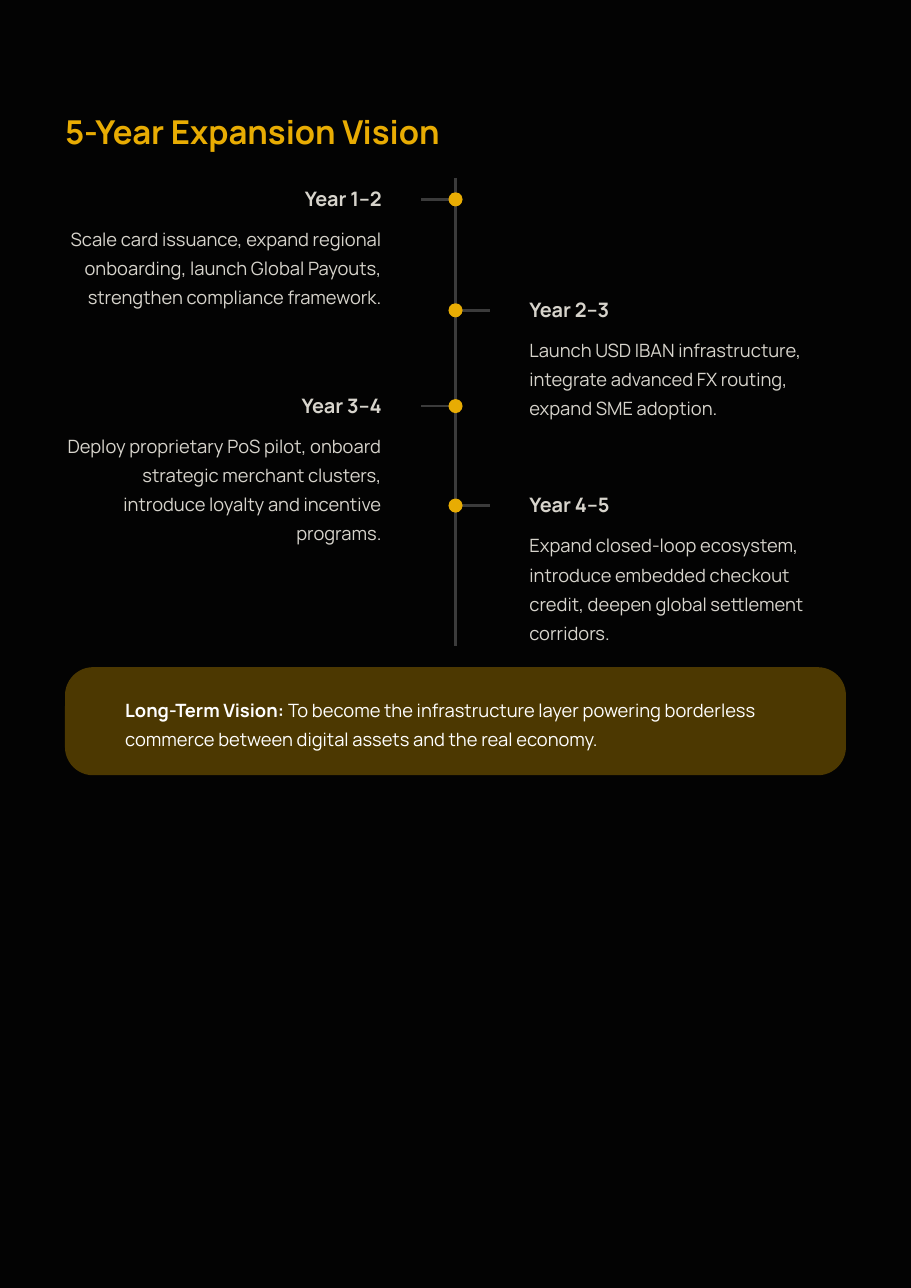
from lxml.etree import SubElement
from pptx import Presentation
from pptx.dml.color import RGBColor
from pptx.enum.shapes import MSO_CONNECTOR as Connector, MSO_SHAPE as Shape
from pptx.enum.text import MSO_ANCHOR as Anchor, MSO_AUTO_SIZE as AutoSize, PP_ALIGN as Align
from pptx.oxml.ns import qn
from pptx.util import Pt

FONT = "Manrope"
BACKGROUND, GOLD, GREY, CREAM, BROWN, WHITE = "030303", "E8AC03", "3B3B3B", "D7D4CC", "4C3801", "FFFFFF"
SLIDE_WIDTH, SLIDE_HEIGHT = 595.44, 841.68
MARGIN = 42.5
CONTENT_WIDTH = SLIDE_WIDTH - 2 * MARGIN
LINE_WIDTH, STUB_LENGTH, DOT_SIZE, TEXT_GAP, TEXT_WIDTH = 1.6, 22.5, 9.2, 48.3, 206.9

MILESTONES = [
    (13.7, "Year 1–2", "Scale card issuance, expand regional onboarding, launch Global Payouts, "
                       "strengthen compliance framework."),
    (86.2, "Year 2–3", "Launch USD IBAN infrastructure, integrate advanced FX routing, "
                       "expand SME adoption."),
    (148.8, "Year 3–4", "Deploy proprietary PoS pilot, onboard strategic merchant clusters, "
                        "introduce loyalty and incentive programs."),
    (213.8, "Year 4–5", "Expand closed-loop ecosystem, introduce embedded checkout credit, "
                        "deepen global settlement corridors."),
]


def color(hex_value):
    """Turn a hex string into a colour."""
    return RGBColor.from_string(hex_value)


def write(frame, runs, size, spacing, hex_value, align=Align.LEFT, anchor=Anchor.TOP, side=0):
    """Fill a text frame with one paragraph of (text, bold) runs."""
    frame.word_wrap = True
    frame.auto_size = AutoSize.NONE
    frame.vertical_anchor = anchor
    frame.margin_left, frame.margin_right = Pt(side), Pt(0)
    frame.margin_top = frame.margin_bottom = Pt(0)
    paragraph = frame.paragraphs[0]
    paragraph.alignment = align
    paragraph.line_spacing = Pt(spacing)
    paragraph.space_before = Pt(0)
    for text, bold in runs:
        run = paragraph.add_run()
        run.text = text
        run.font.name, run.font.size, run.font.bold = FONT, Pt(size), bold
        run.font.color.rgb = color(hex_value)


def add_filled(slide, kind, left, top, width, height, hex_value):
    """Add a flat shape without outline."""
    shape = slide.shapes.add_shape(kind, Pt(left), Pt(top), Pt(width), Pt(height))
    shape.shadow.inherit = False
    shape.fill.solid()
    shape.fill.fore_color.rgb = color(hex_value)
    shape.line.fill.background()
    return shape


def add_rule(slide, x1, y1, x2, y2):
    """Draw a grey line of the timeline."""
    rule = slide.shapes.add_connector(Connector.STRAIGHT, Pt(x1), Pt(y1), Pt(x2), Pt(y2))
    rule.line.color.rgb = color(GREY)
    rule.line.width = Pt(LINE_WIDTH)
    SubElement(rule._element.spPr, qn("a:effectLst"))


def add_title(slide, left, top, width, height):
    """Place the heading in the title placeholder."""
    title = slide.shapes.title
    title.left, title.top, title.width, title.height = Pt(left), Pt(top), Pt(width), Pt(height)
    write(title.text_frame, [("5-Year Expansion Vision", True)], 21.5, 26.5, GOLD)


def add_milestone(slide, axis, center, side, period, goals):
    """Add a dot, its stub and its text; side is -1 for left and 1 for right."""
    add_rule(slide, axis, center, axis + side * STUB_LENGTH, center)
    add_filled(slide, Shape.OVAL, axis - DOT_SIZE / 2, center - DOT_SIZE / 2, DOT_SIZE, DOT_SIZE, GOLD)
    left = axis + TEXT_GAP if side > 0 else axis - TEXT_GAP - TEXT_WIDTH
    align = Align.LEFT if side > 0 else Align.RIGHT
    for text, bold, offset, height, size, spacing in [
        (period, True, -9.3, 16.5, 13, 16.5),
        (goals, False, 14.4, 77, 12, 19),
    ]:
        label = slide.shapes.add_textbox(Pt(left), Pt(center + offset), Pt(TEXT_WIDTH), Pt(height))
        write(label.text_frame, [(text, bold)], size, spacing, CREAM, align)


def add_timeline(slide, left, top, width, height):
    """Draw the spine with milestones alternating left and right."""
    axis = left + width / 2
    add_rule(slide, axis, top, axis, top + height)
    for index, (offset, period, goals) in enumerate(MILESTONES):
        add_milestone(slide, axis, top + offset, 1 if index % 2 else -1, period, goals)


def add_vision(slide, left, top, width, height):
    """Add the rounded panel with the long-term vision."""
    panel = add_filled(slide, Shape.ROUNDED_RECTANGLE, left, top, width, height, BROWN)
    panel.adjustments[0] = 0.26
    runs = [
        ("Long-Term Vision:", True),
        (" To become the infrastructure layer powering borderless commerce between "
         "digital assets and the real economy.", False),
    ]
    write(panel.text_frame, runs, 12, 19, WHITE, anchor=Anchor.MIDDLE, side=34)


def main():
    """Build the slide and save it."""
    deck = Presentation()
    deck.slide_width, deck.slide_height = Pt(SLIDE_WIDTH), Pt(SLIDE_HEIGHT)
    slide = deck.slides.add_slide(deck.slide_layouts[5])
    slide.background.fill.solid()
    slide.background.fill.fore_color.rgb = color(BACKGROUND)
    add_title(slide, MARGIN, 72, CONTENT_WIDTH, 26.5)
    add_timeline(slide, MARGIN, 116.6, CONTENT_WIDTH, 305.4)
    add_vision(slide, MARGIN, 436, CONTENT_WIDTH, 70.6)
    deck.save("out.pptx")


if __name__ == "__main__":
    main()
